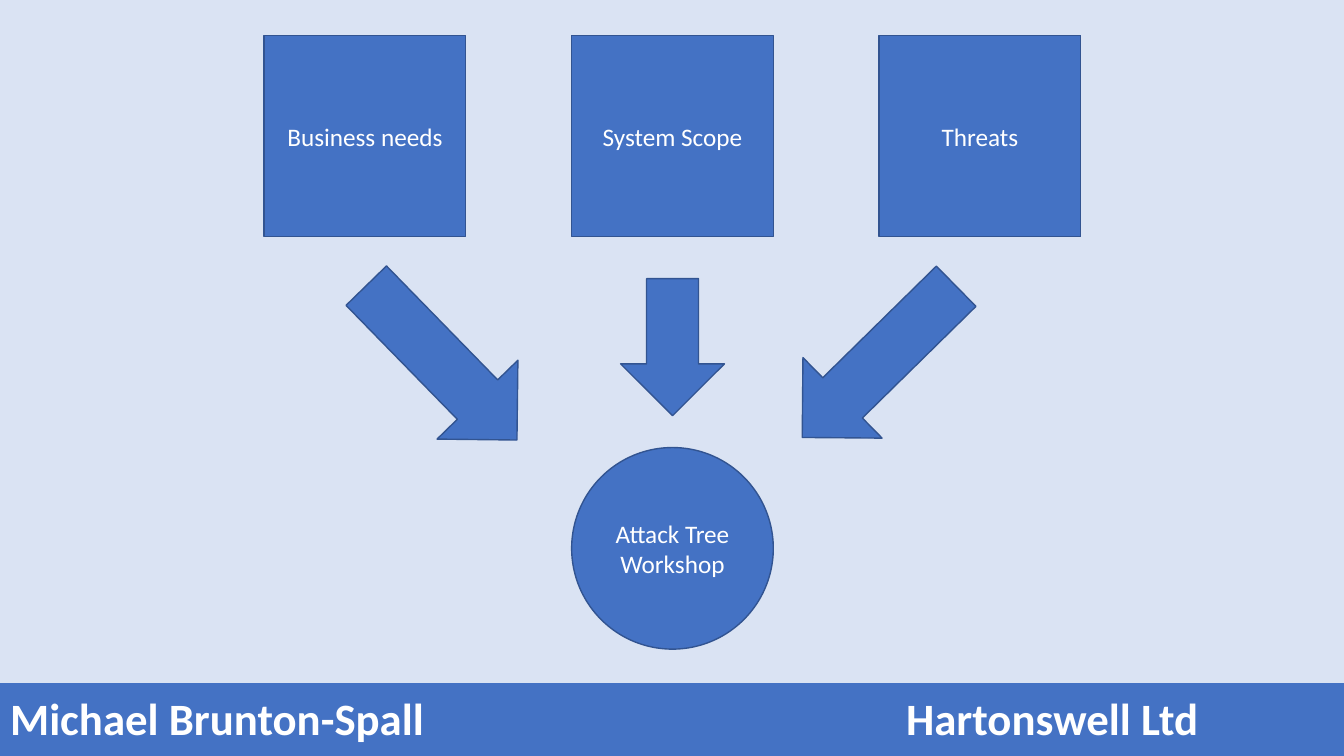
from dataclasses import dataclass

from pptx import Presentation
from pptx.dml.color import RGBColor
from pptx.enum import shapes, text
from pptx.oxml.ns import qn
from pptx.util import Emu, Pt

PX = 9144  # 100 px to the inch
SLIDE_WIDTH, SLIDE_HEIGHT = 1333, 750
NO_TABLE_STYLE = "{2D5ABB26-0587-4C30-8999-92F81FD0307C}"


@dataclass(frozen=True)
class Theme:
    background: RGBColor = RGBColor.from_string("DAE3F3")
    accent: RGBColor = RGBColor.from_string("4472C4")
    outline: RGBColor = RGBColor.from_string("325491")
    ink: RGBColor = RGBColor.from_string("FFFFFF")
    font: str = "Calibri"
    label_size: int = 18
    footer_size: int = 32


THEME = Theme()


def px(*lengths):
    return [Emu(length * PX) for length in lengths]


def paint(fill, colour):
    fill.solid()
    fill.fore_color.rgb = colour


def write(frame, words, *, size, bold=False, align=text.PP_ALIGN.LEFT):
    para = frame.paragraphs[0]
    para.alignment = align
    span = para.add_run()
    span.text = words
    span.font.name = THEME.font
    span.font.size = Pt(size)
    span.font.bold = bold
    span.font.color.rgb = THEME.ink


def add_block(page, kind, left, top, width, height):
    block = page.shapes.add_shape(kind, *px(left, top, width, height))
    block.shadow.inherit = False
    paint(block.fill, THEME.accent)
    block.line.color.rgb = THEME.outline
    block.line.width = Pt(1)
    return block


def add_node(page, kind, words, left, top, side=200):
    """Add a labelled square or circle."""
    frame = add_block(page, kind, left, top, side, side).text_frame
    frame.word_wrap = True
    frame.vertical_anchor = text.MSO_ANCHOR.MIDDLE
    write(frame, words, size=THEME.label_size, align=text.PP_ALIGN.CENTER)


def add_arrow(page, left, top, width, height, angle):
    arrow = add_block(page, shapes.MSO_SHAPE.RIGHT_ARROW, left, top, width, height)
    arrow.rotation = angle


def add_footer(page, entries, top, height):
    """Add a one-row table across the foot of the slide."""
    graphic = page.shapes.add_table(1, len(entries), *px(0, top, SLIDE_WIDTH, height))
    table = graphic.table
    table.first_row = table.horz_banding = False
    table._tbl.tblPr.find(qn("a:tableStyleId")).text = NO_TABLE_STYLE
    for cell, words in zip(table.rows[0].cells, entries):
        paint(cell.fill, THEME.accent)
        cell.vertical_anchor = text.MSO_ANCHOR.MIDDLE
        if words:
            write(cell.text_frame, words, size=THEME.footer_size, bold=True)


def main():
    deck = Presentation()
    deck.slide_width, deck.slide_height = px(SLIDE_WIDTH, SLIDE_HEIGHT)
    page = deck.slides.add_slide(deck.slide_layouts[6])
    paint(page.background.fill, THEME.background)

    add_footer(page, ["Michael Brunton-Spall", "", "Hartonswell Ltd"], 678, 74)
    add_node(page, shapes.MSO_SHAPE.OVAL, "Attack Tree Workshop", 567, 444)
    for column, words in enumerate(["Business needs", "System Scope", "Threats"]):
        add_node(page, shapes.MSO_SHAPE.RECTANGLE, words, 262 + 305 * column, 35)

    for arrow in [
        (331, 304, 214, 112, 45.7),
        (765, 303, 214, 112, 135.5),
        (599, 293, 136, 103, 90),
    ]:
        add_arrow(page, *arrow)

    deck.save("out.pptx")


if __name__ == "__main__":
    main()
